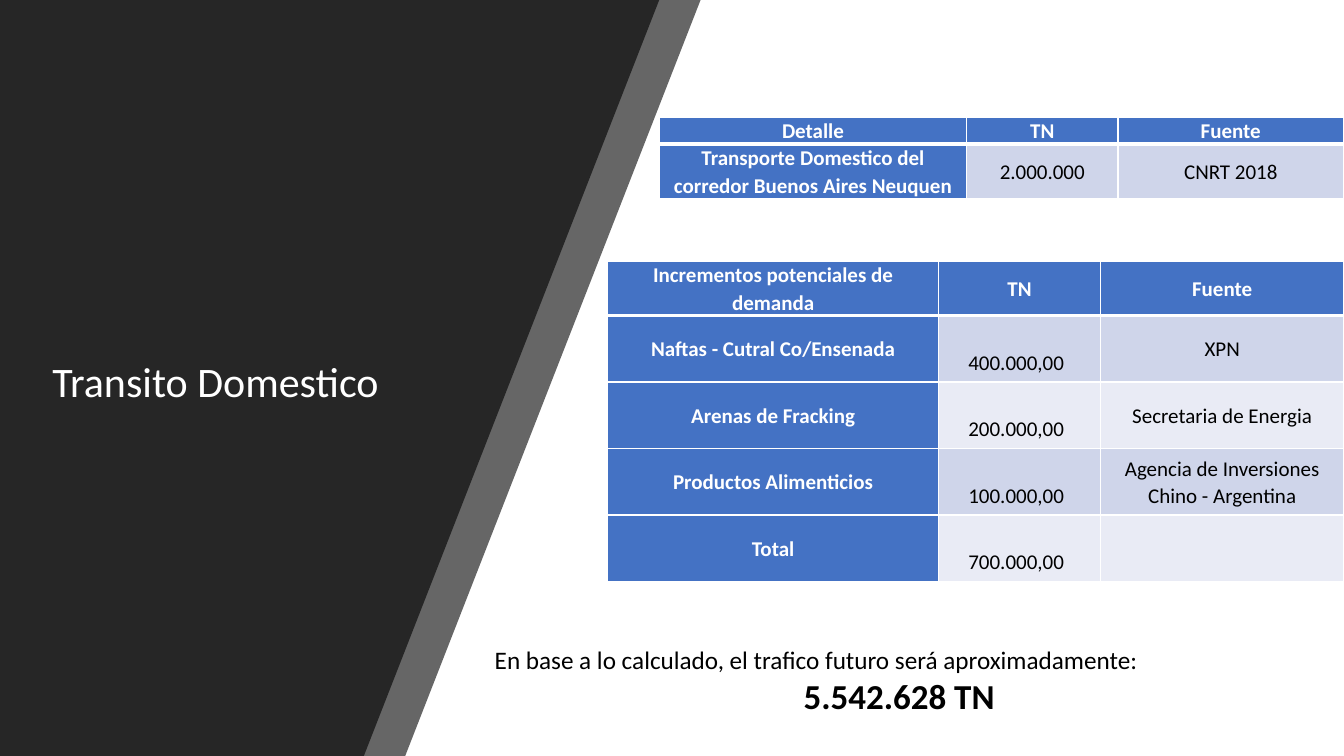
"""Build the domestic transit slide on a grid of tenths of an inch."""
from lxml import etree
from pptx import Presentation, util as u
from pptx.dml.color import RGBColor
from pptx.enum import shapes, text
from pptx.oxml.ns import qn

WIDE, HIGH = 133.33, 75
DARK, BLUE, WHITE, BLACK = "262626", "4472C4", "FFFFFF", "000000"
BANDS = ["CFD5EA", "E9EBF5"]
MID = text.PP_ALIGN.CENTER
HEAD = {"size": u.Pt(15), "bold": True, "color": WHITE}
BODY = {"size": u.Pt(15), "bold": False, "color": BLACK}


def grid(n):
    """Turn grid steps into a length."""
    return u.Inches(n / 10)


def paint(fill, tone):
    """Fill with one solid colour."""
    fill.solid()
    fill.fore_color.rgb = RGBColor.from_string(tone)


def apply(item, form):
    """Set attributes from a dict."""
    for key, val in form.items():
        setattr(item, key, val)


def write(para, words, font, form):
    """Put one styled run in a paragraph."""
    apply(para, form)
    run = para.add_run()
    run.text = words
    run.font.name = "Calibri"
    for key, val in font.items():
        if key == "color":
            run.font.color.rgb = RGBColor.from_string(val)
        else:
            setattr(run.font, key, val)


def finish(shape, tone):
    """Give a shape a plain fill without line or shadow."""
    shape.shadow.inherit = False
    shape.line.fill.background()
    paint(shape.fill, tone)


def wedge(slide, top, foot, alpha=None):
    """Draw a left panel with a slanted right edge."""
    pen = slide.shapes.build_freeform(grid(top), 0)
    pen.add_line_segments([(0, 0), (0, grid(HIGH)), (grid(foot), grid(HIGH))])
    shape = pen.convert_to_shape()
    finish(shape, DARK)
    if alpha:
        tone = shape.fill._xPr.find(".//" + qn("a:srgbClr"))
        etree.SubElement(tone, qn("a:alpha")).set("val", str(alpha * 1000))


def label(slide, box, form):
    """Add a wrapping text box and return its frame."""
    frame = slide.shapes.add_textbox(*map(grid, box)).text_frame
    apply(frame, {"word_wrap": True, **form})
    return frame


def edge(cell, base):
    """Draw white borders, with the bottom one of given width."""
    props = cell._tc.get_or_add_tcPr()
    for spot, (side, width) in enumerate(zip("LRTB", (1, 1, 1, base))):
        line = etree.Element(qn("a:ln" + side), w=str(u.Pt(width)))
        fill = etree.SubElement(line, qn("a:solidFill"))
        etree.SubElement(fill, qn("a:srgbClr"), val=WHITE)
        props.insert(spot, line)


def table(slide, left, top, cols, tall, rows, drop=0):
    """Add a table; drop lowers the figures in its middle column."""
    box = (left, top, sum(cols), sum(tall))
    tab = slide.shapes.add_table(len(rows), len(cols), *map(grid, box)).table
    for col, width in zip(tab.columns, cols):
        col.width = grid(width)
    for row, height in zip(tab.rows, tall):
        row.height = grid(height)
    for r, row in enumerate(rows):
        for c, words in enumerate(row):
            cell = tab.cell(r, c)
            main = r == 0 or c == 0
            low = drop if c == 1 and r else 0
            apply(cell, {"margin_left": grid(0.5), "margin_right": grid(0.5 + low / 4),
                         "margin_top": grid(low), "margin_bottom": 0,
                         "vertical_anchor": text.MSO_ANCHOR.MIDDLE})
            paint(cell.fill, BLUE if main else BANDS[(r - 1) % 2])
            edge(cell, 1 if r else 3)
            if words:
                write(cell.text_frame.paragraphs[0], words, HEAD if main else BODY,
                      {"alignment": MID, "line_spacing": 1.07})


def main():
    """Compose and save the slide."""
    deck = Presentation()
    apply(deck, {"slide_width": grid(WIDE), "slide_height": grid(HIGH)})
    slide = deck.slides.add_slide(deck.slide_layouts[6])
    paint(slide.background.fill, BLACK)
    sheet = slide.shapes.add_shape(shapes.MSO_SHAPE.RECTANGLE, 0, 0, grid(WIDE), grid(HIGH))
    finish(sheet, WHITE)
    wedge(slide, 69.5, 40.2, 70)
    wedge(slide, 65.4, 36.1)

    name = label(slide, (4.2, 34.2, 36.8, 6.6), {"vertical_anchor": text.MSO_ANCHOR.BOTTOM})
    write(name.paragraphs[0], "Transito Domestico",
          {"size": u.Pt(30), "color": WHITE}, {"line_spacing": 0.9})

    table(slide, 65.4, 11.6, [30.5, 15, 22.4], [2.7, 5.4], [
        ["Detalle", "TN", "Fuente"],
        ["Transporte Domestico del corredor Buenos Aires Neuquen", "2.000.000", "CNRT 2018"]])
    table(slide, 60.3, 25.9, [32.8, 16.1, 24.1], [5.4] + [6.6] * 4, [
        ["Incrementos potenciales de demanda", "TN", "Fuente"],
        ["Naftas - Cutral Co/Ensenada", "400.000,00", "XPN"],
        ["Arenas de Fracking", "200.000,00", "Secretaria de Energia"],
        ["Productos Alimenticios", "100.000,00", "Agencia de Inversiones Chino - Argentina"],
        ["Total", "700.000,00", ""]], drop=2.7)

    note = label(slide, (45.5, 63.4, 87.4, 8.2), {})
    first = note.paragraphs[0]
    write(first, "En base a lo calculado, el trafico futuro será aproximadamente:",
          {"size": u.Pt(18), "color": BLACK}, {})
    first._p.get_or_add_pPr().set("marL", str(grid(2.6)))
    write(note.add_paragraph(), "5.542.628 TN",
          {"size": u.Pt(25), "bold": True, "color": BLACK}, {"alignment": MID})
    deck.save("out.pptx")


if __name__ == "__main__":
    main()
